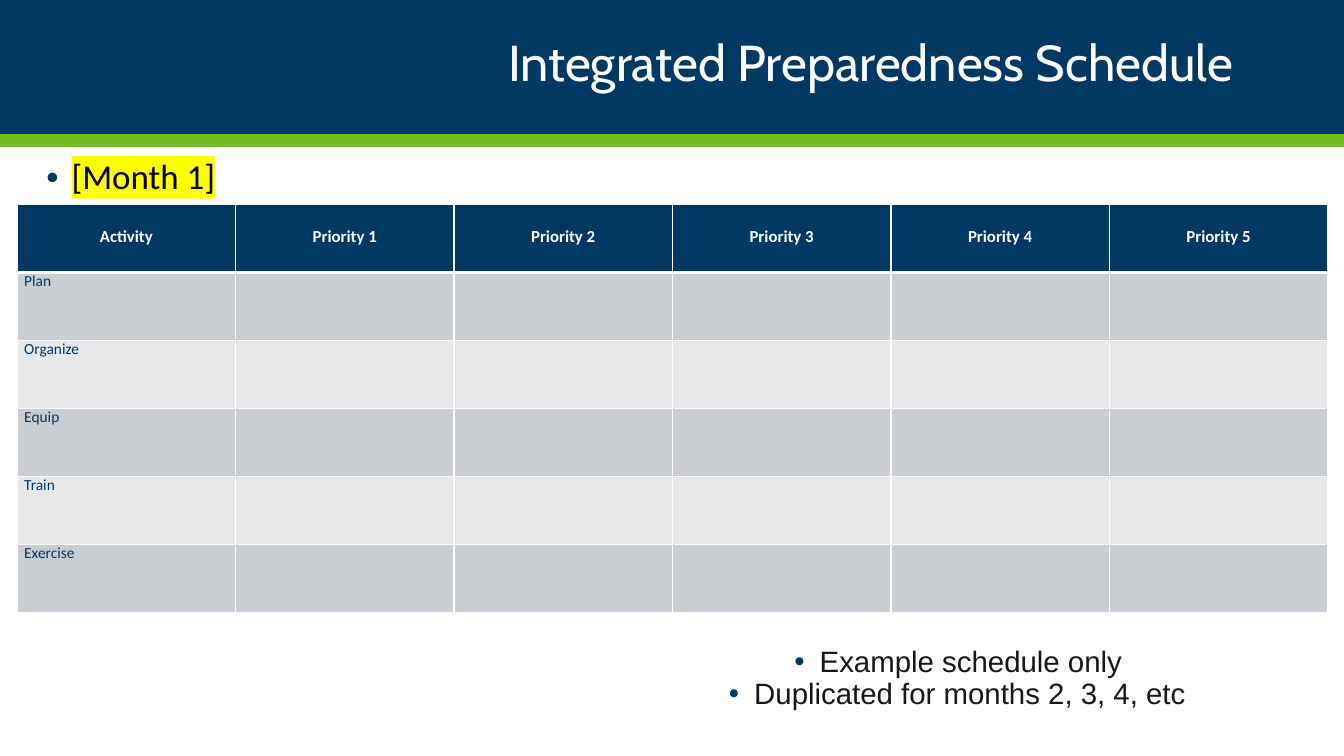
from pptx import Presentation, util as u
from pptx.dml.color import RGBColor
from pptx.enum import shapes, text
from pptx.oxml.ns import qn
from lxml import etree

HUES = {"navy": "003864", "green": "78BD20", "white": "FFFFFF", "gray": "CACED2",
        "pale": "E7E8EA", "yellow": "FFFF00", "black": "000000", "ink": "171717"}


def rgb(hue):
    return RGBColor.from_string(HUES[hue])


def tint(parent, hue):
    etree.SubElement(parent, qn("a:srgbClr"), val=HUES[hue])


def inset(item, top=0):
    item.margin_left = item.margin_right = item.margin_bottom = 0
    item.margin_top = u.Inches(top)


def write(frame, words, size=12, font="Calibri", hue="navy", bold=False, align=None,
          lead=None, before=0, left=0, hang=0, dot=False):
    lines = words.split("\n")
    lefts = left if isinstance(left, list) else [left] * len(lines)
    for i, (line, start) in enumerate(zip(lines, lefts)):
        para = frame.paragraphs[0] if i == 0 else frame.add_paragraph()
        para.alignment = align or text.PP_ALIGN.LEFT
        para.space_before = u.Pt(before if i == 0 else 0)
        if lead:
            para.line_spacing = u.Pt(lead)
        props = para._p.get_or_add_pPr()
        props.set("marL", str(u.Inches(start)))
        props.set("indent", str(u.Inches(hang)))
        if dot:
            tint(etree.SubElement(props, qn("a:buClr")), "navy")
            etree.SubElement(props, qn("a:buFont"), typeface="Arial")
            etree.SubElement(props, qn("a:buChar"), char="•")
        run = para.add_run()
        run.text = line
        run.font.size = u.Pt(size)
        run.font.name = font
        run.font.bold = bold
        run.font.color.rgb = rgb(hue)


class Deck:
    def __init__(self):
        self.show = Presentation()
        self.show.slide_width = u.Inches(13.33)
        self.show.slide_height = u.Inches(7.5)
        self.slide = self.show.slides.add_slide(self.show.slide_layouts[6])

    def block(self, box, hue):
        shape = self.slide.shapes.add_shape(
            shapes.MSO_SHAPE.RECTANGLE, *map(u.Inches, box))
        shape.shadow.inherit = False
        shape.fill.solid()
        shape.fill.fore_color.rgb = rgb(hue)
        shape.line.fill.background()
        return shape

    def label(self, box, words, top=0, **style):
        frame = self.slide.shapes.add_textbox(*map(u.Inches, box)).text_frame
        inset(frame, top)
        frame.word_wrap = True
        write(frame, words, **style)

    def badge(self, box, words, fill, **style):
        frame = self.block(box, fill).text_frame
        inset(frame)
        frame.word_wrap = False
        frame.vertical_anchor = text.MSO_ANCHOR.TOP
        write(frame, words, **style)

    def edge(self, cell, row):
        props = cell._tc.get_or_add_tcPr()
        thick = {"lnT": row == 1, "lnB": row == 0}
        for i, side in enumerate(("lnL", "lnR", "lnT", "lnB")):
            width = u.Pt(3 if thick.get(side) else 1)
            line = etree.Element(qn("a:" + side), w=str(width))
            tint(etree.SubElement(line, qn("a:solidFill")), "white")
            props.insert(i, line)

    def grid(self, box, heads, names):
        rows, cols = len(names) + 1, len(heads)
        table = self.slide.shapes.add_table(rows, cols, *map(u.Inches, box)).table
        for col in table.columns:
            col.width = u.Inches(box[2] / cols)
        for r, row in enumerate(table.rows):
            row.height = u.Inches(box[3] / rows)
            for c, cell in enumerate(row.cells):
                cell.fill.solid()
                cell.fill.fore_color.rgb = rgb(
                    "navy" if r == 0 else "gray" if r % 2 else "pale")
                self.edge(cell, r)
                inset(cell, 0 if r else 0.22)
                if r == 0:
                    write(cell.text_frame, heads[c], hue="white", bold=True,
                          align=text.PP_ALIGN.CENTER)
                elif c == 0:
                    write(cell.text_frame, names[r - 1], size=11, lead=12.6, left=0.07)


def main():
    deck = Deck()
    deck.block((0, 0, 13.33, 1.33), "navy")
    deck.block((0, 1.33, 13.33, 0.13), "green")
    deck.label((2.54, 0.03, 9.9, 1.11), "Integrated Preparedness Schedule",
               size=36, font="Cabin", hue="white", left=2.5, before=1, top=0.28)
    heads = ["Activity"] + [f"Priority {n}" for n in range(1, 6)]
    deck.grid((0.17, 2.03, 13, 4.05), heads,
              ["Plan", "Organize", "Equip", "Train", "Exercise"])
    deck.label((0.45, 1.52, 0.15, 0.44), "•", size=25, font="Arial",
               left=0.01, before=0.9, top=0.01)
    deck.badge((0.71, 1.55, 1.42, 0.42), "[Month 1]", "yellow",
               size=25, hue="black", lead=28.9)
    deck.label((7.22, 6.41, 4.55, 0.66),
               "Example schedule only\nDuplicated for months 2, 3, 4, etc",
               size=21, font="Arial", hue="ink", lead=22.7, before=1,
               left=[0.91, 0.26], hang=-0.25, dot=True, top=0.01)
    deck.show.save("out.pptx")


if __name__ == "__main__":
    main()
